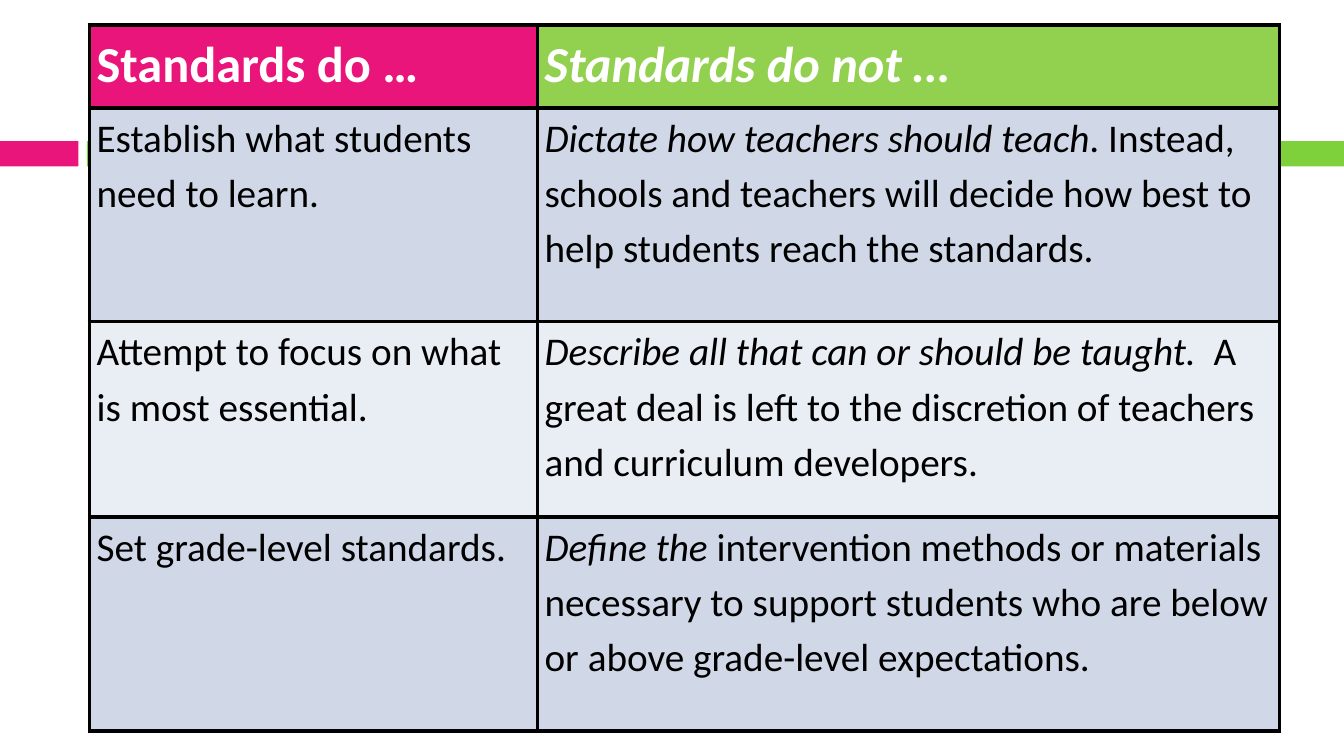
from dataclasses import dataclass

from lxml import etree
from pptx import Presentation
from pptx import util as u
from pptx.dml import color
from pptx.enum import shapes
from pptx.oxml import ns


@dataclass(frozen=True)
class Theme:
    face: str = "Calibri"
    head: int = 36
    body: int = 28
    lead: float = 1.15
    edge: int = 3
    pink: str = "EA157A"
    green: str = "7FD13B"
    lime: str = "92D050"
    blue: str = "D0D8E8"
    pale: str = "E9EDF4"
    white: str = "FFFFFF"
    black: str = "000000"


class Deck:
    """Holds the theme and the slide, on a grid of 120 columns by 75 rows."""

    COLS, ROWS = 120, 75

    def __init__(self, theme):
        self.theme = theme
        self.file = Presentation()
        self.file.slide_width = u.Inches(13.33)
        self.file.slide_height = u.Inches(7.5)
        self.slide = self.file.slides.add_slide(self.file.slide_layouts[6])

    def wide(self, cols):
        return round(self.file.slide_width * cols / self.COLS)

    def high(self, rows):
        return round(self.file.slide_height * rows / self.ROWS)

    def paint(self, item, tint):
        item.fill.solid()
        item.fill.fore_color.rgb = color.RGBColor.from_string(tint)

    def bar(self, left, top, width, height, tint):
        bar = self.slide.shapes.add_shape(
            shapes.MSO_SHAPE.RECTANGLE, self.wide(left), self.high(top),
            self.wide(width), self.high(height))
        bar.shadow.inherit = False
        bar.line.fill.background()
        self.paint(bar, tint)

    def frame(self, cell):
        """Draw the four borders, placed ahead of the cell's fill."""
        props = cell._tc.get_or_add_tcPr()
        for spot, side in enumerate(("lnL", "lnR", "lnT", "lnB")):
            line = etree.Element(ns.qn(f"a:{side}"), w=str(u.Pt(self.theme.edge)))
            fill = etree.SubElement(line, ns.qn("a:solidFill"))
            etree.SubElement(fill, ns.qn("a:srgbClr"), val=self.theme.black)
            props.insert(spot, line)

    def cell(self, cell, runs, fill, size, ink, bold):
        """Fill one cell; runs are pairs of wording and italic."""
        cell.margin_left = cell.margin_right = u.Inches(0.07)
        cell.margin_top = cell.margin_bottom = 0
        self.paint(cell, fill)
        self.frame(cell)
        para = cell.text_frame.paragraphs[0]
        para.line_spacing = self.theme.lead
        font = para.font
        font.name, font.size, font.bold = self.theme.face, u.Pt(size), bold
        font.color.rgb = color.RGBColor.from_string(ink)
        for words, slant in runs:
            run = para.add_run()
            run.text = words
            run.font.italic = slant

    def table(self, left, top, widths, heights, rows):
        look = self.theme
        grid = self.slide.shapes.add_table(
            len(heights), len(widths), self.wide(left), self.high(top),
            self.wide(sum(widths)), self.high(sum(heights))).table
        grid.first_row = grid.horz_banding = False
        for col, width in zip(grid.columns, widths):
            col.width = self.wide(width)
        for r, (height, row) in enumerate(zip(heights, rows)):
            grid.rows[r].height = self.high(height)
            if r == 0:
                fills, style = (look.pink, look.lime), (look.head, look.white, True)
            else:
                fills = (look.blue if r % 2 else look.pale,) * 2
                style = (look.body, look.black, False)
            for c, runs in enumerate(row):
                self.cell(grid.cell(r, c), runs, fills[c], *style)


ROWS = [
    ([("Standards do …", False)],
     [("Standards do not …", True)]),
    ([("Establish what students need to learn.", False)],
     [("Dictate how teachers should teach", True),
      (". Instead, schools and teachers will decide how best to help "
       "students reach the standards.", False)]),
    ([("Attempt to focus on what is most essential.", False)],
     [("Describe all that can or should be taught.  ", True),
      ("A great deal is left to the discretion of teachers and "
       "curriculum developers.", False)]),
    ([("Set grade-level standards.", False)],
     [("Define the ", True),
      ("intervention methods or materials necessary to support students "
       "who are below or above grade-level expectations.", False)]),
]


def main():
    deck = Deck(Theme())
    # Bands behind the table
    deck.bar(0, 14, 7, 2.5, deck.theme.pink)
    deck.bar(7.75, 14, 112.25, 2.5, deck.theme.green)
    # Comparison table
    deck.table(8, 2.5, (40, 66.25), (8.2, 21.2, 19.4, 21.2), ROWS)
    deck.file.save("out.pptx")


if __name__ == "__main__":
    main()
